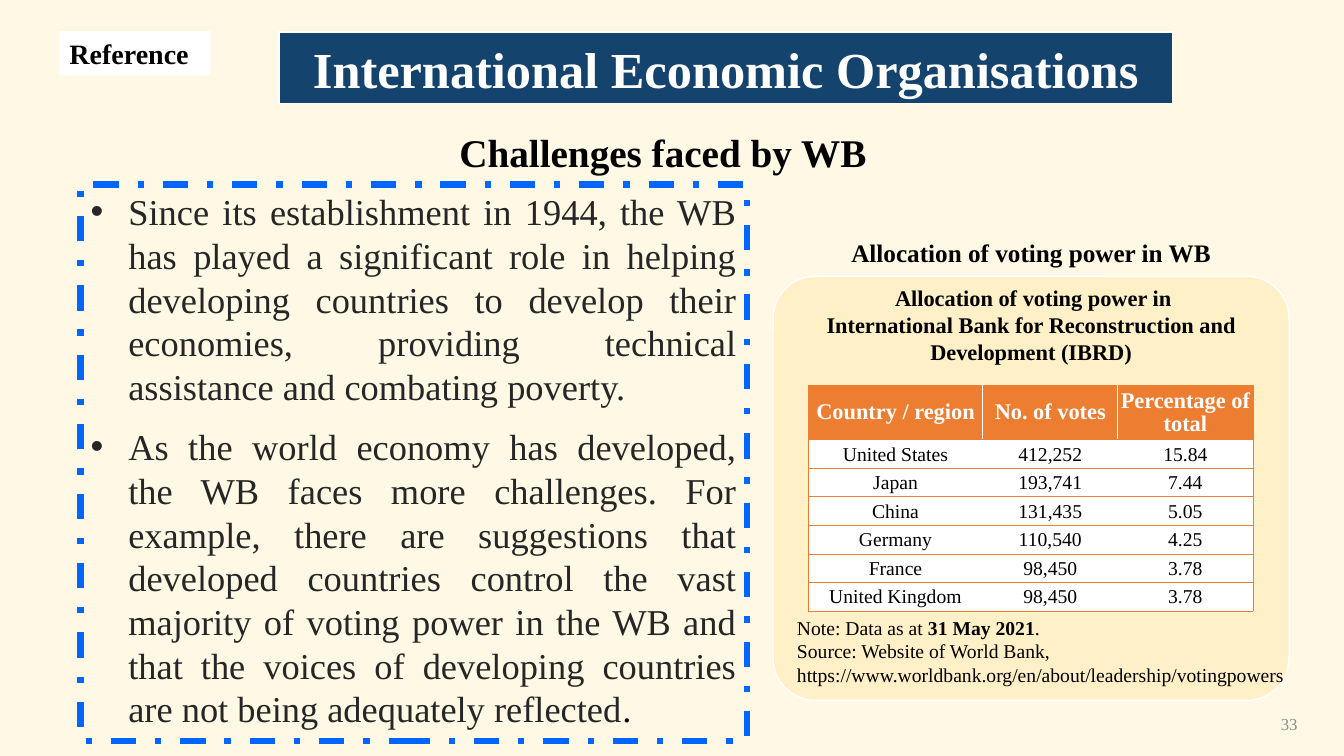
from lxml import etree
from pptx import Presentation
from pptx import util as u
from pptx.dml.color import RGBColor
from pptx.enum import dml, shapes, text
from pptx.oxml.ns import qn

Pt = u.Pt
FONT = "Times New Roman"
BLACK, WHITE, ORANGE = "000000", "FFFFFF", "ED7D31"
LEFT, CENTER, RIGHT, JUSTIFY = (text.PP_ALIGN.LEFT, text.PP_ALIGN.CENTER,
                                text.PP_ALIGN.RIGHT, text.PP_ALIGN.JUSTIFY)
MIDDLE = text.MSO_ANCHOR.MIDDLE

VOTES = [
    ("Country / region", "No. of votes", "Percentage of total"),
    ("United States", "412,252", "15.84"),
    ("Japan", "193,741", "7.44"),
    ("China", "131,435", "5.05"),
    ("Germany", "110,540", "4.25"),
    ("France", "98,450", "3.78"),
    ("United Kingdom", "98,450", "3.78"),
]


def color(hex_):
    return RGBColor.from_string(hex_)


def fill(target, hex_):
    target.fill.solid()
    target.fill.fore_color.rgb = color(hex_)


def outline(sp, hex_, width):
    sp.line.color.rgb = color(hex_)
    sp.line.width = Pt(width)


def add_run(p, words, size, hex_=BLACK, bold=False):
    r = p.add_run()
    r.text = words
    r.font.name, r.font.size, r.font.bold = FONT, Pt(size), bold
    r.font.color.rgb = color(hex_)


def write(tf, paragraphs, size, hex_=BLACK, bold=False, align=LEFT, spacing=None):
    """Each paragraph is a list of (words, changes to the run format)."""
    tf.word_wrap = True
    for i, runs in enumerate(paragraphs):
        p = tf.paragraphs[0] if i == 0 else tf.add_paragraph()
        p.alignment = align
        if spacing:
            p.line_spacing = spacing
        for words, changes in runs:
            add_run(p, words, **{"size": size, "hex_": hex_, "bold": bold, **changes})


def add_text(s, box, paragraphs, size, **style):
    sp = s.shapes.add_textbox(*map(Pt, box))
    write(sp.text_frame, paragraphs, size, **style)
    return sp


def add_box(s, kind, box):
    sp = s.shapes.add_shape(kind, *map(Pt, box))
    sp.shadow.inherit = False
    return sp


def title_banner(s, box):
    sp = s.shapes.title
    sp.left, sp.top, sp.width, sp.height = map(Pt, box)
    geom = etree.SubElement(sp._element.spPr, qn("a:prstGeom"), prst="roundRect")
    adjust = etree.SubElement(geom, qn("a:avLst"))
    etree.SubElement(adjust, qn("a:gd"), name="adj", fmla="val 20000")
    fill(sp, "14446E")
    outline(sp, WHITE, 1)
    tf = sp.text_frame
    tf.vertical_anchor = MIDDLE
    tf.margin_left = tf.margin_right = Pt(19)
    tf.margin_top = tf.margin_bottom = Pt(2)
    write(tf, [[("International Economic Organisations", {})]], 36,
          hex_=WHITE, bold=True, align=CENTER)


def reference_tag(s, box):
    sp = add_box(s, shapes.MSO_SHAPE.RECTANGLE, box)
    fill(sp, WHITE)
    sp.line.fill.background()
    write(sp.text_frame, [[("Reference", {})]], 20, bold=True)


def challenges(s, box):
    sp = add_box(s, shapes.MSO_SHAPE.RECTANGLE, box)
    sp.fill.background()
    outline(sp, "0066FF", 4.5)
    sp.line.dash_style = dml.MSO_LINE.DASH_DOT
    tf = sp.text_frame
    tf.vertical_anchor = text.MSO_ANCHOR.TOP
    write(tf, [
        [("Since its establishment in 1944, the WB has played a significant role in "
          "helping developing countries to develop their economies, providing "
          "technical assistance and combating poverty.", {})],
        [("As the world economy has developed, the WB faces more challenges. For "
          "example, there are suggestions that developed countries control the vast "
          "majority of voting power in the WB and that the voices of developing "
          "countries are not being adequately reflected", {}), (".", {"hex_": BLACK})],
    ], 26, hex_="262626", align=JUSTIFY)
    # Hanging bullets
    for p in tf.paragraphs:
        p.space_before = Pt(12)
        pPr = p._p.get_or_add_pPr()
        pPr.set("marL", str(Pt(27)))
        pPr.set("indent", str(-Pt(27)))
        etree.SubElement(pPr, qn("a:buFont"), typeface="Arial")
        etree.SubElement(pPr, qn("a:buChar"), char="•")


def border(cell, sides):
    tcPr = cell._tc.get_or_add_tcPr()
    for i, side in enumerate(sides):
        ln = etree.Element(qn("a:ln" + side), w=str(Pt(0.5)))
        solid = etree.SubElement(ln, qn("a:solidFill"))
        etree.SubElement(solid, qn("a:srgbClr"), val=ORANGE)
        tcPr.insert(i, ln)


def votes_table(s, box):
    frame = s.shapes.add_table(len(VOTES), len(VOTES[0]), *map(Pt, box))
    table = frame.table
    header = 39
    for column, width in zip(table.columns, (124.6, 96.5, 96.5)):
        column.width = Pt(width)
    for i, row in enumerate(table.rows):
        row.height = Pt(header if i == 0 else (box[3] - header) / (len(VOTES) - 1))
        for j, cell in enumerate(row.cells):
            head = i == 0
            fill(cell, ORANGE if head else WHITE)
            border(cell, ("LTB", "TB", "RTB")[j])
            cell.vertical_anchor = MIDDLE
            cell.margin_left = cell.margin_right = cell.margin_top = Pt(0.7)
            cell.margin_bottom = 0
            write(cell.text_frame, [[(VOTES[i][j], {})]], 16 if head else 14,
                  hex_=WHITE if head else BLACK, bold=head, align=CENTER,
                  spacing=0.93 if head else None)


def voting_panel(s, box):
    x, y, w, h = box
    # Translucent card
    card = add_box(s, shapes.MSO_SHAPE.ROUNDED_RECTANGLE, box)
    card.adjustments[0] = 0.1
    fill(card, "FFC000")
    tint = card._element.spPr.find(qn("a:solidFill"))[0]
    etree.SubElement(tint, qn("a:alpha"), val="13000")
    outline(card, WHITE, 1)
    # Headings, table and note
    add_text(s, (x - 2, y - 37.5, w + 4, 33), [[("Allocation of voting power in WB", {})]],
             18, bold=True, align=CENTER, spacing=1.3)
    add_text(s, (x + 4, y + 2, w - 8, 65.5), [
        [(" Allocation of voting power in", {})],
        [("International Bank for Reconstruction and Development (IBRD)", {})],
    ], 16, bold=True, align=CENTER)
    votes_table(s, (x + 25.2, y + 77.8, 317.6, 161.3))
    add_text(s, (x + 10, y + 239, w, 58), [
        [("Note: Data as at ", {}), ("31 May 2021", {"bold": True}), (".", {})],
        [("Source: Website of World Bank, "
          "https://www.worldbank.org/en/about/leadership/votingpowers", {})],
    ], 14)


def main():
    prs = Presentation()
    prs.slide_width, prs.slide_height = Pt(960), Pt(540)
    s = prs.slides.add_slide(prs.slide_layouts[5])
    fill(s.background, "FFF8E5")

    title_banner(s, (199.4, 23, 638.3, 51))
    reference_tag(s, (42.5, 22.3, 108, 31.5))
    # Subtitle
    add_text(s, (321, 71.3, 320, 52), [[("Challenges faced by WB", {})]],
             28, bold=True, spacing=1.5)
    challenges(s, (57.6, 131.8, 476, 397.4))
    voting_panel(s, (552.2, 197.3, 368.6, 303))
    # Slide number
    number = add_text(s, (718, 502.6, 216, 28.8), [[("33", {})]], 12,
                      hex_="8C8C8C", align=RIGHT)
    number.text_frame.vertical_anchor = MIDDLE
    prs.save("out.pptx")


if __name__ == "__main__":
    main()
